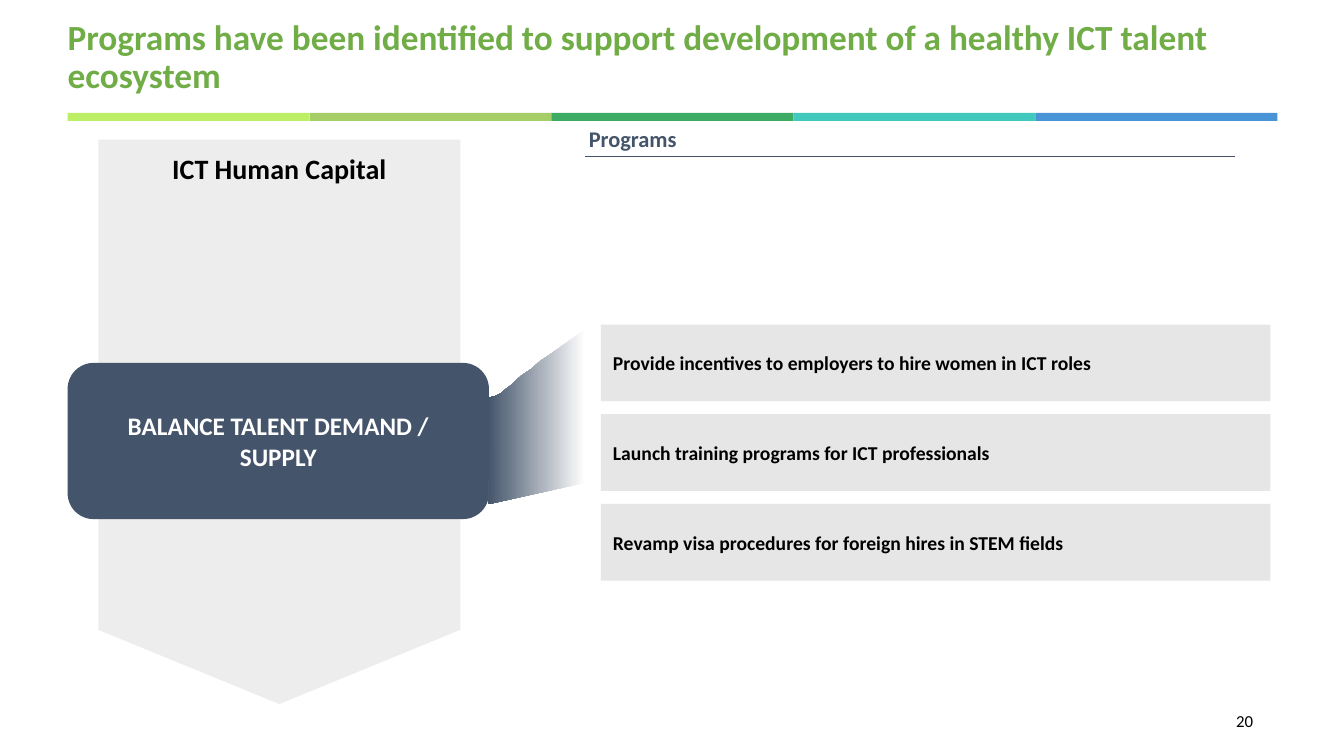
"""Build the ICT human capital programs slide."""
from pptx import Presentation, util as u
from pptx.dml.color import RGBColor
from pptx.enum import shapes, text
from pptx.oxml.ns import qn
from lxml import etree

PX = 9144
COLORS = {
    "title": "70AD47", "navy": "44546A", "arrow": "EDEDED",
    "program": "E7E6E6", "black": "000000", "white": "FFFFFF",
}
STRIPE = ["BCEF66", "A5CE68", "3DAB64", "41C9BD", "4994D7"]
PROGRAMS = [
    "Provide incentives to employers to hire women in ICT roles",
    "Launch training programs for ICT professionals",
    "Revamp visa procedures for foreign hires in STEM fields",
]
ALIGN = text.PP_ALIGN
ANCHOR = text.MSO_ANCHOR
KIND = shapes.MSO_SHAPE

presentation = Presentation()
presentation.slide_width = 1333 * PX
presentation.slide_height = 750 * PX
slide = presentation.slides.add_slide(presentation.slide_layouts[6])


def add_block(kind, box, fill):
    shape = slide.shapes.add_shape(kind, *[value * PX for value in box])
    shape.shadow.inherit = False
    shape.fill.solid()
    shape.fill.fore_color.rgb = RGBColor.from_string(fill)
    shape.line.fill.background()
    return shape


def write(shape, words, size, color, align=ALIGN.LEFT, anchor=ANCHOR.MIDDLE,
          margins=(12, 8), bold=True, spacing=1.0, wrap=True):
    frame = shape.text_frame
    frame.word_wrap = wrap
    frame.vertical_anchor = anchor
    frame.margin_left = frame.margin_right = margins[0] * PX
    frame.margin_top = frame.margin_bottom = margins[1] * PX
    paragraph = frame.paragraphs[0]
    paragraph.alignment = align
    paragraph.line_spacing = spacing
    run = paragraph.add_run()
    run.text = words
    run.font.name = "Calibri"
    run.font.size = u.Pt(size)
    run.font.bold = bold
    run.font.color.rgb = RGBColor.from_string(COLORS[color])


for index, color in enumerate(STRIPE):
    add_block(KIND.RECTANGLE, (67 + 240 * index, 112, 240, 8), color)

page_number = slide.shapes.add_textbox(1202 * PX, 695 * PX, 65 * PX, 40 * PX)
write(page_number, "20", 12, "black", align=ALIGN.CENTER, margins=(10, 5), bold=False)

title = slide.shapes.add_textbox(67 * PX, 21 * PX, 1200 * PX, 73 * PX)
write(title, "Programs have been identified to support development of a healthy ICT talent ecosystem",
      25.2, "title", margins=(0, 0), spacing=0.9)

arrow = add_block(KIND.PENTAGON, (-3, 239, 560, 359), COLORS["arrow"])
arrow.adjustments[0] = 0.205
arrow.rotation = 90
arrow.text_frame._txBody.bodyPr.set("vert", "vert270")
write(arrow, "ICT Human Capital", 20, "black", align=ALIGN.CENTER, anchor=ANCHOR.TOP)

balance = add_block(KIND.ROUNDED_RECTANGLE, (67, 360, 418, 155), COLORS["navy"])
write(balance, "BALANCE TALENT DEMAND / SUPPLY", 18, "white", align=ALIGN.CENTER)

for index, program in enumerate(PROGRAMS):
    row = add_block(KIND.RECTANGLE, (596, 322 + 89 * index, 664, 76), COLORS["program"])
    write(row, program, 14, "black")

rule = slide.shapes.add_connector(shapes.MSO_CONNECTOR.STRAIGHT,
                                  580 * PX, 155 * PX, 1225 * PX, 155 * PX)
rule.line.color.rgb = RGBColor.from_string(COLORS["navy"])
rule.line.width = u.Pt(1)
etree.SubElement(rule._element.spPr, qn("a:effectLst"))

heading = slide.shapes.add_textbox(584 * PX, 121 * PX, 88 * PX, 35 * PX)
write(heading, "Programs", 16, "navy", anchor=ANCHOR.BOTTOM, margins=(0, 5),
      spacing=0.9, wrap=False)

STEPS = 16
controls = [(484, 394), (502, 392), (484, 394), (579, 328)]
curve = []
for step in range(1, STEPS + 1):
    t = step / STEPS
    weights = [(1 - t) ** 3, 3 * t * (1 - t) ** 2, 3 * t ** 2 * (1 - t), t ** 3]
    curve.append(tuple(sum(weight * point[axis] for weight, point in zip(weights, controls))
                       for axis in (0, 1)))
builder = slide.shapes.build_freeform(*controls[0], scale=PX)
builder.add_line_segments(curve + [(580, 479), (485, 500)], close=True)
beam = builder.convert_to_shape()
beam.shadow.inherit = False
beam.line.fill.background()
beam.fill.gradient()
beam.fill.gradient_angle = 180
for stop, position, color in zip(beam.fill.gradient_stops, (0, 1), ("white", "navy")):
    stop.position = position
    stop.color.rgb = RGBColor.from_string(COLORS[color])

presentation.save("out.pptx")
